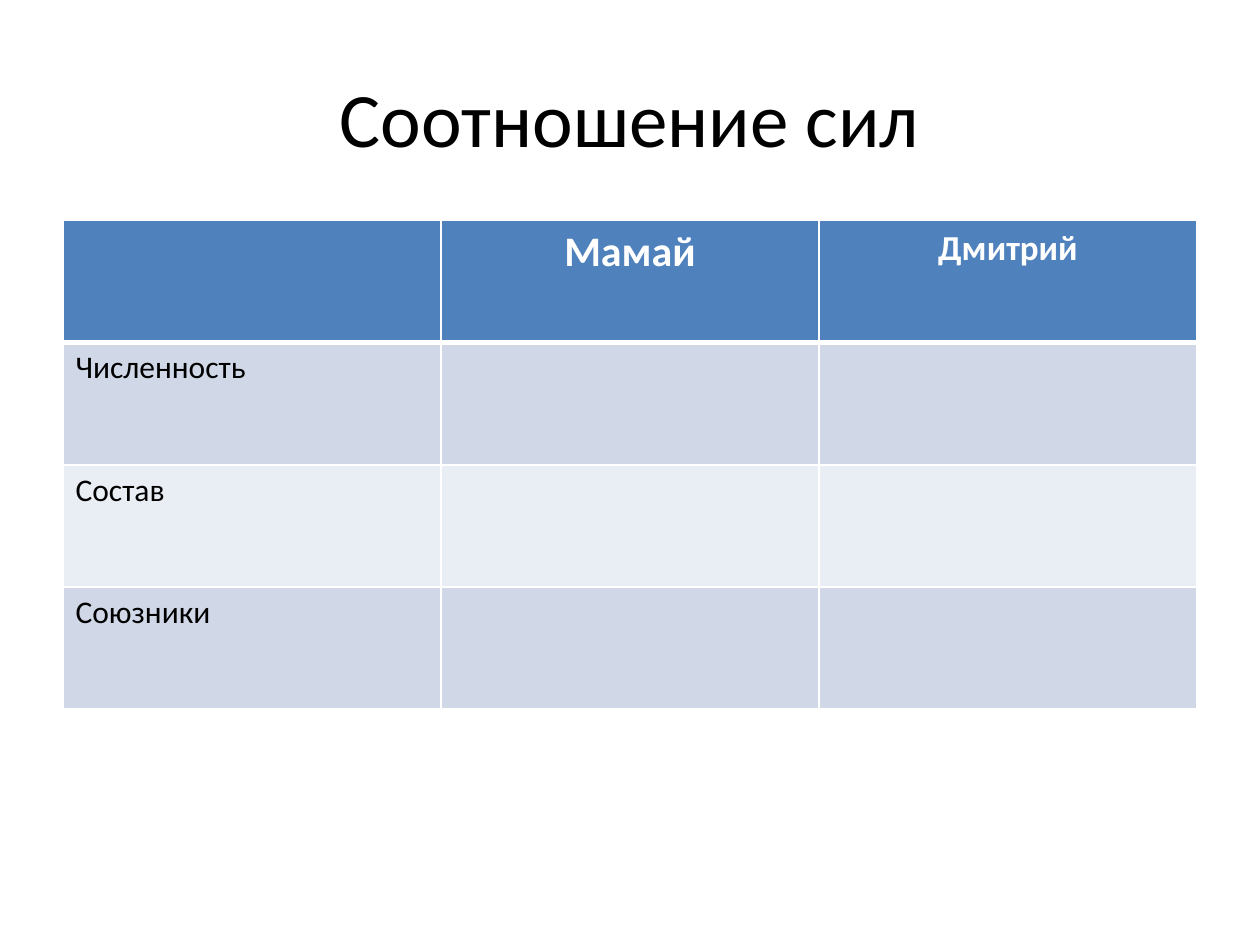
"""Build a slide with a table comparing the strength of two forces."""
from dataclasses import dataclass

from lxml.etree import SubElement
from pptx import Presentation
from pptx.dml.color import RGBColor as RGB
from pptx.enum.text import MSO_ANCHOR as Anchor, PP_ALIGN as Align
from pptx.oxml.ns import qn
from pptx.util import Inches, Pt


@dataclass(frozen=True)
class Theme:
    font: str = "Calibri"
    text: str = "000000"
    white: str = "FFFFFF"
    header: str = "4F81BD"
    bands: tuple[str, str] = ("D0D8E8", "E9EDF4")
    title_size: int = 44
    body_size: int = 18
    border: int = 1
    header_border: int = 3


@dataclass(frozen=True)
class CellText:
    text: str = ""
    size: int = 18


THEME = Theme()
HEADERS = (CellText(), CellText("Мамай", 24), CellText("Дмитрий", 20))
CRITERIA = ("Численность", "Состав", "Союзники")
LEFT, WIDTH = Inches(0.5), Inches(9)
ROW_HEIGHT = Inches(0.97)


def write_text(tf, text: str, size: int, color: str, align, bold: bool = False) -> None:
    tf.text = text
    p = tf.paragraphs[0]
    p.alignment = align
    for r in p.runs:
        r.font.name = THEME.font
        r.font.size = Pt(size)
        r.font.bold = bold
        r.font.color.rgb = RGB.from_string(color)


def add_borders(cell, top: int, bottom: int) -> None:
    tc_pr = cell._tc.get_or_add_tcPr()
    widths = {"lnL": THEME.border, "lnR": THEME.border, "lnT": top, "lnB": bottom}
    for tag, width in widths.items():
        ln = SubElement(tc_pr, qn(f"a:{tag}"), w=str(Pt(width)))
        fill = SubElement(ln, qn("a:solidFill"))
        SubElement(fill, qn("a:srgbClr"), val=THEME.white)


def style_cell(cell, content: CellText, row: int) -> None:
    is_header = row == 0
    add_borders(
        cell,
        top=THEME.header_border if row == 1 else THEME.border,
        bottom=THEME.header_border if is_header else THEME.border,
    )
    cell.fill.solid()
    fill = THEME.header if is_header else THEME.bands[(row - 1) % 2]
    cell.fill.fore_color.rgb = RGB.from_string(fill)
    if content.text:
        color = THEME.white if is_header else THEME.text
        align = Align.CENTER if is_header else Align.LEFT
        write_text(cell.text_frame, content.text, content.size, color, align, is_header)


def add_title(s, text: str) -> None:
    sp = s.shapes.add_textbox(LEFT, Inches(0.3), WIDTH, Inches(1.25))
    tf = sp.text_frame
    tf.word_wrap = True
    tf.vertical_anchor = Anchor.MIDDLE
    write_text(tf, text, THEME.title_size, THEME.text, Align.CENTER)


def add_forces_table(s) -> None:
    body = [(CellText(name, THEME.body_size), CellText(), CellText()) for name in CRITERIA]
    rows = [HEADERS, *body]
    table = s.shapes.add_table(
        len(rows), len(HEADERS), LEFT, Inches(1.75), WIDTH, ROW_HEIGHT * len(rows)
    ).table
    for i, contents in enumerate(rows):
        table.rows[i].height = ROW_HEIGHT
        for j, content in enumerate(contents):
            style_cell(table.cell(i, j), content, i)


def main() -> None:
    prs = Presentation()
    prs.slide_width, prs.slide_height = Inches(10), Inches(7.5)
    s = prs.slides.add_slide(prs.slide_layouts[6])
    add_title(s, "Соотношение сил")
    add_forces_table(s)
    prs.save("out.pptx")


if __name__ == "__main__":
    main()
